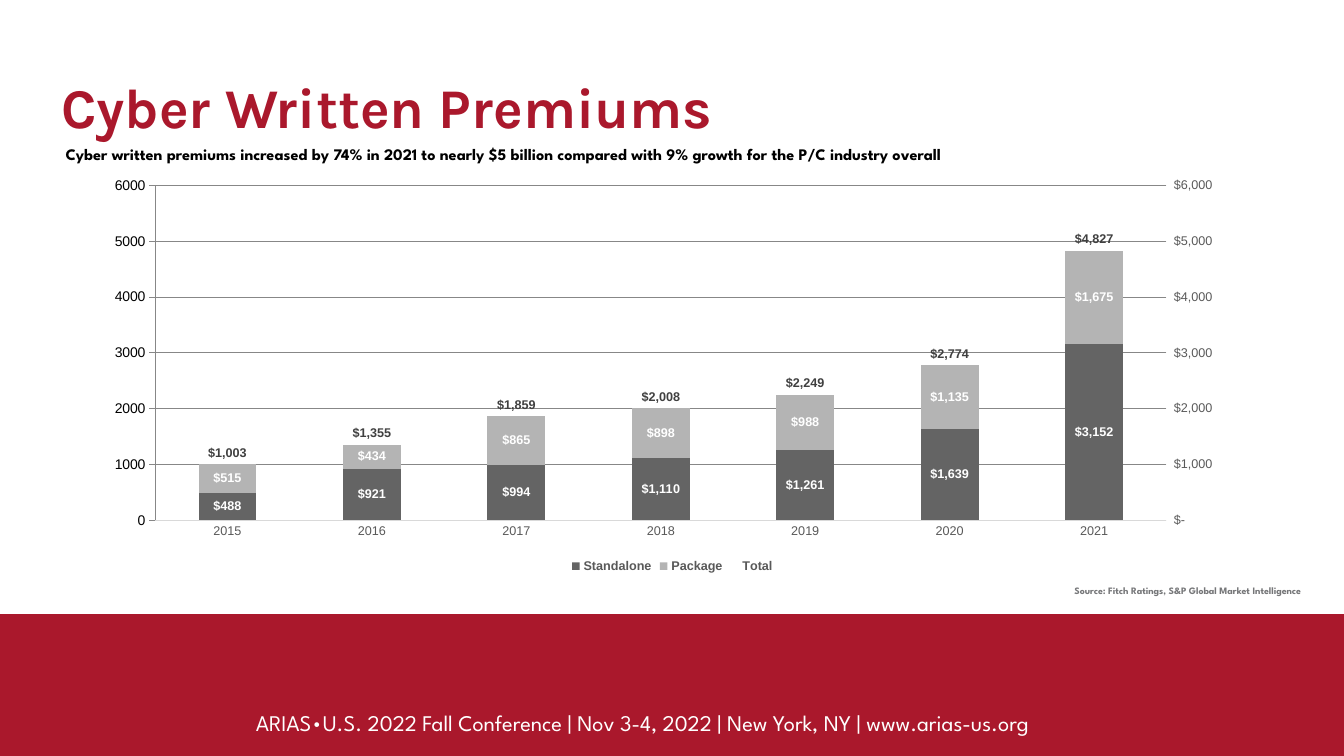
import pptx
import pptx.chart.axis
import pptx.chart.data
import pptx.dml.color
import pptx.enum.chart
import pptx.enum.shapes
import pptx.enum.text
import pptx.oxml
import pptx.oxml.ns
import pptx.util

RED, WHITE, BLACK, GREY = "AA182C", "FFFFFF", "000000", "595959"
RULE = "D9D9D9"
HEAD, BODY, PLOT = "Karla", "League Spartan", "Arial"
COLS, ROWS = 160, 90
DOLLAR = '"$"#,##0'
LEDGER = '_("$"* #,##0_);_("$"* \\(#,##0\\);_("$"* "-"_);_(@_)'

YEARS = [str(year) for year in range(2015, 2022)]
ALONE = [488, 921, 994, 1110, 1261, 1639, 3152]
PACK = [515, 434, 865, 898, 988, 1135, 1675]
TOTAL = [a + b for a, b in zip(ALONE, PACK)]

NS = 'xmlns:c="http://schemas.openxmlformats.org/drawingml/2006/chart"'
LINE = f"""<c:lineChart {NS}><c:grouping val="standard"/><c:varyColors val="0"/>
<c:marker val="1"/><c:axId val="501"/><c:axId val="502"/></c:lineChart>"""
RIGHT = f"""<c:valAx {NS}><c:axId val="502"/>
<c:scaling><c:orientation val="minMax"/><c:max val="6000"/><c:min val="0"/></c:scaling>
<c:delete val="0"/><c:axPos val="r"/><c:majorTickMark val="out"/>
<c:minorTickMark val="none"/><c:tickLblPos val="nextTo"/><c:crossAx val="501"/>
<c:crosses val="max"/><c:majorUnit val="1000"/></c:valAx>"""
HIDDEN = f"""<c:catAx {NS}><c:axId val="501"/>
<c:scaling><c:orientation val="minMax"/></c:scaling><c:delete val="1"/>
<c:axPos val="b"/><c:majorTickMark val="none"/><c:minorTickMark val="none"/>
<c:tickLblPos val="nextTo"/><c:crossAx val="502"/><c:crosses val="autoZero"/></c:catAx>"""
FRAME = f"""<c:layout {NS}><c:manualLayout><c:layoutTarget val="inner"/>
<c:xMode val="edge"/><c:yMode val="edge"/><c:x val="0.05"/><c:y val="0.04"/>
<c:w val="0.88"/><c:h val="0.82"/></c:manualLayout></c:layout>"""


def tint(code):
    return pptx.dml.color.RGBColor.from_string(code)


def style(font, face, size, code, bold=False):
    font.name, font.size, font.bold = face, pptx.util.Pt(size), bold
    font.color.rgb = tint(code)


def add_right(chart):
    """Move the last series to a line on a second axis; return that axis."""
    bars = chart.plots[0]._element
    area = bars.getparent()
    last = bars.findall(pptx.oxml.ns.qn("c:ser"))[-1]
    for flag in last.findall(pptx.oxml.ns.qn("c:invertIfNegative")):
        last.remove(flag)
    line = pptx.oxml.parse_xml(LINE)
    line.insert(2, last)
    bars.addnext(line)
    right = pptx.oxml.parse_xml(RIGHT)
    chart.value_axis._element.addnext(right)
    right.addnext(pptx.oxml.parse_xml(HIDDEN))
    for old in area.findall(pptx.oxml.ns.qn("c:layout")):
        area.remove(old)
    area.insert(0, pptx.oxml.parse_xml(FRAME))
    return pptx.chart.axis.ValueAxis(right)


class Deck:
    def __init__(self):
        self.show = pptx.Presentation()
        self.show.slide_width = pptx.util.Inches(13.33)
        self.show.slide_height = pptx.util.Inches(7.5)
        self.page = self.show.slides.add_slide(self.show.slide_layouts[5])

    def span(self, col, row, wide, high):
        """Turn grid columns and rows into slide lengths."""
        unit_x = self.show.slide_width / COLS
        unit_y = self.show.slide_height / ROWS
        return [int(n) for n in
                (col * unit_x, row * unit_y, wide * unit_x, high * unit_y)]

    def fill(self, box, text, face, size, code, bold, align="LEFT", anchor="TOP"):
        frame = box.text_frame
        frame.text = text
        frame.word_wrap = True
        frame.auto_size = pptx.enum.text.MSO_AUTO_SIZE.NONE
        frame.vertical_anchor = getattr(pptx.enum.text.MSO_ANCHOR, anchor)
        inset = pptx.util.Inches(0.05)
        frame.margin_left = frame.margin_right = inset
        frame.margin_top = frame.margin_bottom = inset
        para = frame.paragraphs[0]
        para.alignment = getattr(pptx.enum.text.PP_ALIGN, align)
        style(para.runs[0].font, face, size, code, bold)
        return para

    def title(self, place, text):
        box = self.page.shapes.title
        box.left, box.top, box.width, box.height = self.span(*place)
        self.fill(box, text, HEAD, 40, RED, True)

    def text(self, place, text, size, code, bold=True, indent=0, **where):
        box = self.page.shapes.add_textbox(*self.span(*place))
        para = self.fill(box, text, BODY, size, code, bold, **where)
        props = para._p.get_or_add_pPr()
        props.set("marL", str(pptx.util.Inches(indent)))
        props.set("indent", "0")

    def band(self, place, code):
        kind = pptx.enum.shapes.MSO_SHAPE.RECTANGLE
        box = self.page.shapes.add_shape(kind, *self.span(*place))
        box.shadow.inherit = False
        box.fill.solid()
        box.fill.fore_color.rgb = tint(code)
        box.line.fill.background()

    def label(self, series, code, spot):
        marks = series.data_labels
        marks.show_value = True
        marks.number_format, marks.number_format_is_linked = DOLLAR, False
        marks.position = getattr(pptx.enum.chart.XL_LABEL_POSITION, spot)
        style(marks.font, PLOT, 9, code, True)

    def axis(self, axis, form=None):
        style(axis.tick_labels.font, PLOT, 9, GREY)
        if form:
            axis.tick_labels.number_format = form
            axis.tick_labels.number_format_is_linked = False
            axis.format.line.fill.background()

    def chart(self, place):
        data = pptx.chart.data.CategoryChartData()
        data.categories = YEARS
        for name, vals in (("Standalone", ALONE), ("Package", PACK), ("Total", TOTAL)):
            data.add_series(name, vals)
        kind = pptx.enum.chart.XL_CHART_TYPE.COLUMN_STACKED
        chart = self.page.shapes.add_chart(kind, *self.span(*place), data).chart
        style(chart.font, PLOT, 10, BLACK)
        chart.has_title = False
        right = add_right(chart)
        bars, line = chart.plots
        bars.gap_width, bars.overlap, bars.vary_by_categories = 150, 100, False
        for series, code in zip(bars.series, ("646464", "B4B4B4")):
            series.format.fill.solid()
            series.format.fill.fore_color.rgb = tint(code)
            self.label(series, WHITE, "CENTER")
        total = line.series[0]
        total.smooth = False
        total.format.line.fill.background()
        total.marker.style = pptx.enum.chart.XL_MARKER_STYLE.NONE
        self.label(total, "404040", "ABOVE")

        years, left = chart.category_axis, chart.value_axis
        left.minimum_scale, left.maximum_scale, left.major_unit = 0, 6000, 1000
        left.has_major_gridlines = True
        self.axis(years)
        self.axis(left, "0")
        self.axis(right, LEDGER)
        for axis in (years, left):
            axis.major_tick_mark = pptx.enum.chart.XL_TICK_MARK.NONE
        for rule in (years.format.line, left.major_gridlines.format.line):
            rule.color.rgb = tint(RULE)
            rule.width = pptx.util.Pt(0.75)

        chart.has_legend = True
        chart.legend.position = pptx.enum.chart.XL_LEGEND_POSITION.BOTTOM
        chart.legend.include_in_layout = False
        style(chart.legend.font, PLOT, 9, GREY, True)


def main():
    deck = Deck()
    deck.band((0, 73.1, COLS, 16.9), RED)
    deck.text((7.3, 83.75, 138.4, 4.55),
              "ARIAS•U.S. 2022 Fall Conference | Nov 3-4, 2022 | "
              "New York, NY | www.arias-us.org",
              16, WHITE, False, align="CENTER", anchor="MIDDLE")
    deck.title((6.7, 8.05, 146.4, 12.25), "Cyber Written Premiums")
    deck.text((4.2, 16.55, 138.5, 5.3),
              "Cyber written premiums increased by 74% in 2021 to nearly $5 billion "
              "compared with 9% growth for the P/C industry overall",
              11.5, BLACK, indent=0.25)
    deck.text((124.3, 69, 34.8, 4.4),
              "Source: Fitch Ratings, S&P Global Market Intelligence",
              7, "767779", indent=0.25)
    deck.chart((11.64, 20.15, 136.8, 48.6))
    deck.show.save("out.pptx")


if __name__ == "__main__":
    main()
